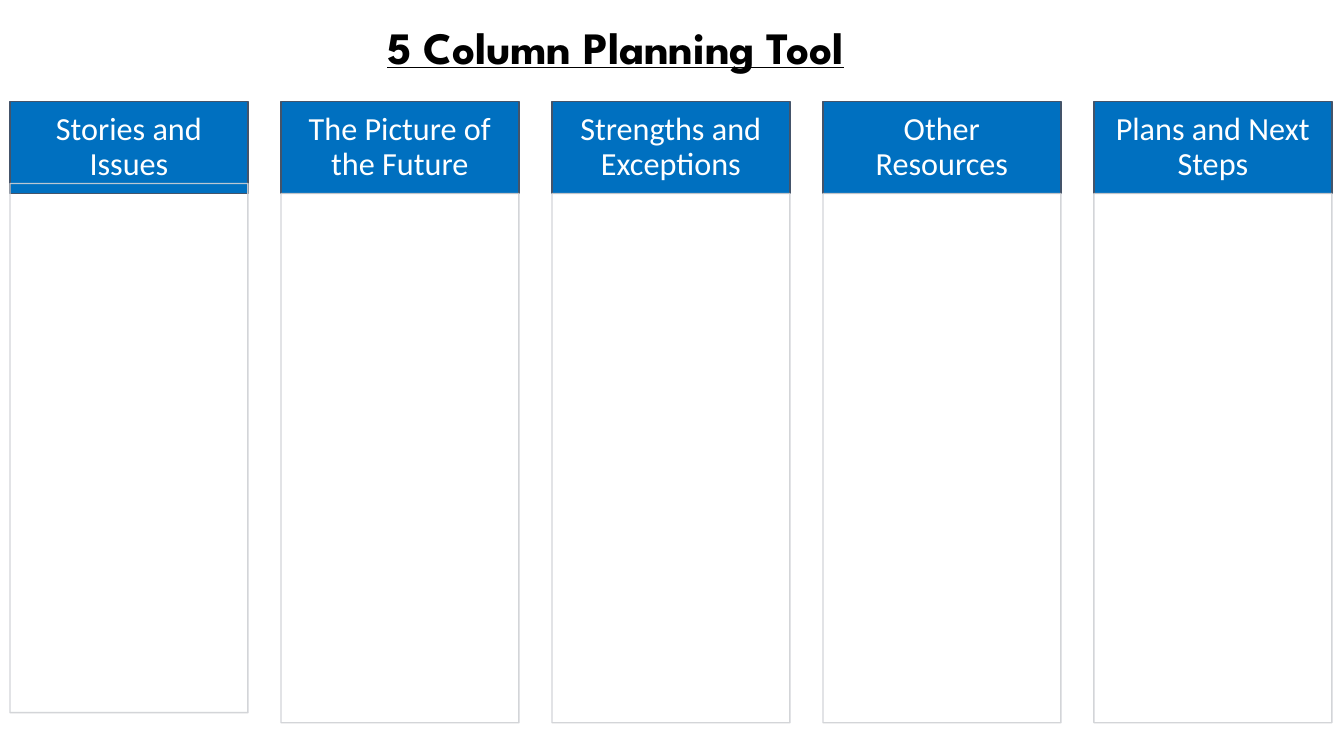
from lxml import etree
from pptx import Presentation
from pptx import util as u
from pptx.dml.color import RGBColor
from pptx.enum import shapes, text
from pptx.oxml import ns

TITLE = "5 Column Planning Tool"
HEADINGS = [
    "Stories and Issues",
    "The Picture of the Future",
    "Strengths and Exceptions",
    "Other Resources",
    "Plans and Next Steps",
]
COLORS = {
    "header": "0070C0",
    "header_line": "44546A",
    "body_line": "CFD1D4",
    "header_text": "FFFFFF",
    "title": "000000",
}
FIRST_LEFT, LAST_LEFT = 0.1, 10.85
COLUMN_WIDTH = 2.36
HEADER_TOP, HEADER_HEIGHT = 1.01, 0.91
BODY_HEIGHT = 5.25
FIRST_BODY_LIFT = 0.1


def color(name):
    return RGBColor.from_string(COLORS[name])


def add_box(group, left, top, height, line_color):
    box = group.shapes.add_shape(
        shapes.MSO_SHAPE.RECTANGLE,
        u.Inches(left), u.Inches(top), u.Inches(COLUMN_WIDTH), u.Inches(height),
    )
    box.shadow.inherit = False
    box.line.color.rgb = color(line_color)
    box.line.width = u.Pt(1)
    return box


def add_header(group, left, heading):
    header = add_box(group, left, HEADER_TOP, HEADER_HEIGHT, "header_line")
    header.fill.solid()
    header.fill.fore_color.rgb = color("header")
    frame = header.text_frame
    frame.word_wrap = True
    frame.vertical_anchor = text.MSO_ANCHOR.MIDDLE
    frame.margin_left = frame.margin_right = u.Inches(0.18)
    frame.margin_top = frame.margin_bottom = u.Inches(0.1)
    paragraph = frame.paragraphs[0]
    paragraph.text = heading
    paragraph.alignment = text.PP_ALIGN.CENTER
    paragraph.line_spacing = 0.9
    paragraph.font.name = "Calibri"
    paragraph.font.size = u.Pt(23)
    paragraph.font.color.rgb = color("header_text")


def add_body(group, left, top):
    body = add_box(group, left, top, BODY_HEIGHT, "body_line")
    body.fill.background()
    line_color = body.line._get_or_add_ln().find(".//" + ns.qn("a:srgbClr"))
    etree.SubElement(line_color, ns.qn("a:alpha"), val="90000")


def add_title(slide):
    title = slide.shapes.title
    title.left, title.top = u.Inches(3.74), u.Inches(0.15)
    title.width, title.height = u.Inches(5.84), u.Inches(0.64)
    frame = title.text_frame
    frame.word_wrap = True
    frame.auto_size = text.MSO_AUTO_SIZE.SHAPE_TO_FIT_TEXT
    frame.vertical_anchor = text.MSO_ANCHOR.TOP
    paragraph = frame.paragraphs[0]
    paragraph.text = TITLE
    paragraph.alignment = text.PP_ALIGN.LEFT
    paragraph.font.name = "League Spartan"
    paragraph.font.size = u.Pt(32)
    paragraph.font.bold = True
    paragraph.font.underline = True
    paragraph.font.color.rgb = color("title")


def main():
    presentation = Presentation()
    presentation.slide_width = u.Inches(13.33)
    presentation.slide_height = u.Inches(7.5)
    slide = presentation.slides.add_slide(presentation.slide_layouts[5])
    add_title(slide)
    columns = slide.shapes.add_group_shape()
    pitch = (LAST_LEFT - FIRST_LEFT) / (len(HEADINGS) - 1)
    for index, heading in enumerate(HEADINGS):
        left = FIRST_LEFT + index * pitch
        lift = FIRST_BODY_LIFT if index == 0 else 0
        add_header(columns, left, heading)
        add_body(columns, left, HEADER_TOP + HEADER_HEIGHT - lift)
    presentation.save("out.pptx")


if __name__ == "__main__":
    main()
